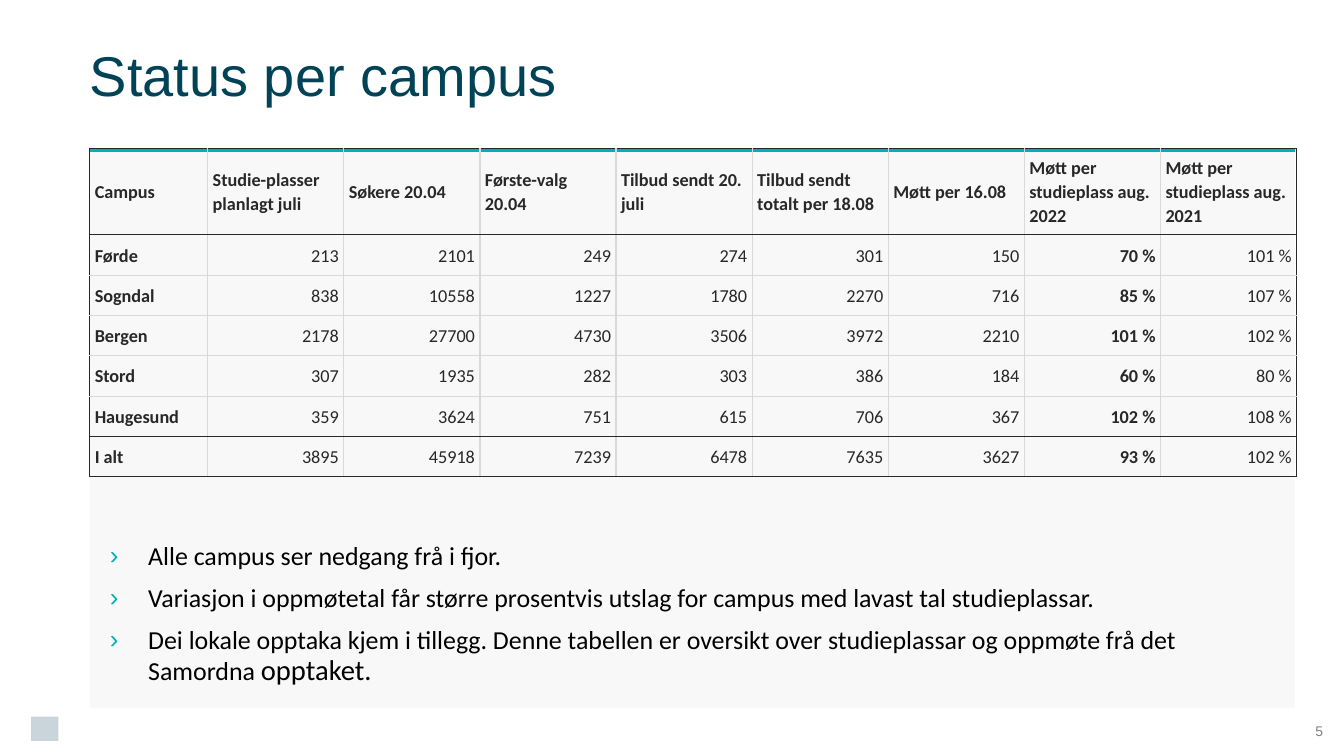
from dataclasses import dataclass

from lxml.etree import SubElement
from pptx import Presentation
from pptx.dml.color import RGBColor
from pptx.enum.shapes import MSO_CONNECTOR, MSO_SHAPE
from pptx.enum.text import MSO_ANCHOR, PP_ALIGN
from pptx.oxml import parse_xml
from pptx.oxml.ns import nsdecls, qn
from pptx.util import Inches, Pt


@dataclass(frozen=True)
class Theme:
    title: str = "004357"
    accent: str = "00AFBA"
    panel: str = "F2F2F2"
    mark: str = "C9D5DA"
    ink: str = "282828"
    grid: str = "D9D9D9"
    body: str = "000000"
    muted: str = "808080"
    head_font: str = "Arial"
    body_font: str = "Calibri"
    title_size: float = 40
    body_size: float = 18.5
    large_size: float = 20.4
    cell_size: float = 13
    page_size: float = 10


THEME = Theme()
LEFT, WIDTH = 0.89, 11.95
COLS = [1.17] + [1.35] * 8
ROWS = [0.86] + [0.4] * 6
BOLD_COL = 7

DATA = [
    ["Campus", "Studie-plasser planlagt juli", "Søkere 20.04", "Første-valg 20.04",
     "Tilbud sendt 20. juli", "Tilbud sendt totalt per 18.08", "Møtt per 16.08",
     "Møtt per studieplass aug. 2022", "Møtt per studieplass aug. 2021"],
    ["Førde", "213", "2101", "249", "274", "301", "150", "70 %", "101 %"],
    ["Sogndal", "838", "10558", "1227", "1780", "2270", "716", "85 %", "107 %"],
    ["Bergen", "2178", "27700", "4730", "3506", "3972", "2210", "101 %", "102 %"],
    ["Stord", "307", "1935", "282", "303", "386", "184", "60 %", "80 %"],
    ["Haugesund", "359", "3624", "751", "615", "706", "367", "102 %", "108 %"],
    ["I alt", "3895", "45918", "7239", "6478", "7635", "3627", "93 %", "102 %"],
]
POINTS = [
    "Alle campus ser nedgang frå i fjor.",
    "Variasjon i oppmøtetal får større prosentvis utslag for campus med lavast tal studieplassar.",
    "Dei lokale opptaka kjem i tillegg. Denne tabellen er oversikt over studieplassar "
    "og oppmøte frå det Samordna ",
]
LAST_WORD = "opptaket."


def style(run, size, color, face, bold=False):
    font = run.font
    font.size, font.name, font.bold = Pt(size), face, bold
    font.color.rgb = RGBColor.from_string(color)


def set_frame(frame, inset, anchor):
    frame.word_wrap = True
    frame.vertical_anchor = anchor
    frame.margin_left = frame.margin_right = Inches(inset)
    frame.margin_top = frame.margin_bottom = Inches(inset)


def add_title(slide, text):
    title = slide.shapes.title
    title.left, title.top = Inches(LEFT), Inches(0)
    title.width, title.height = Inches(WIDTH), Inches(1.48)
    frame = title.text_frame
    frame.text = text
    set_frame(frame, 0, MSO_ANCHOR.MIDDLE)
    frame.paragraphs[0].alignment = PP_ALIGN.LEFT
    style(frame.paragraphs[0].runs[0], THEME.title_size, THEME.title, THEME.head_font)


def add_block(slide, box, color, alpha=100):
    """Add a plain filled rectangle; alpha is its opacity in percent."""
    block = slide.shapes.add_shape(MSO_SHAPE.RECTANGLE, *map(Inches, box))
    block.shadow.inherit = False
    block.fill.solid()
    block.fill.fore_color.rgb = RGBColor.from_string(color)
    block.line.fill.background()
    if alpha < 100:
        tint = block.fill._xPr.find(qn("a:solidFill"))[0]
        SubElement(tint, qn("a:alpha"), val=str(alpha * 1000))


def add_rule(slide, top):
    rule = slide.shapes.add_connector(
        MSO_CONNECTOR.STRAIGHT, Inches(LEFT), Inches(top), Inches(LEFT + WIDTH), Inches(top))
    rule.line.color.rgb = RGBColor.from_string(THEME.accent)
    rule.line.width = Pt(2)
    SubElement(rule._element.spPr, qn("a:effectLst"))


def set_edges(cell, colors):
    """Draw the cell borders, given in the order left, right, top, bottom."""
    props = cell._tc.get_or_add_tcPr()
    for spot, (side, color) in enumerate(zip("LRTB", colors)):
        props.insert(spot, parse_xml(
            f'<a:ln{side} {nsdecls("a")} w="12700"><a:solidFill>'
            f'<a:srgbClr val="{color}"/></a:solidFill></a:ln{side}>'))


def fill_cell(cell, text, row, col):
    cell.text_frame.text = text
    cell.fill.background()
    cell.vertical_anchor = MSO_ANCHOR.MIDDLE
    cell.margin_left = cell.margin_right = Inches(0.05)
    cell.margin_top = cell.margin_bottom = Inches(0)
    para = cell.text_frame.paragraphs[0]
    para.line_spacing, para.space_after = 1.07, Pt(8)
    label = row == 0 or col == 0
    para.alignment = PP_ALIGN.LEFT if label else PP_ALIGN.RIGHT
    style(para.runs[0], THEME.cell_size, THEME.ink, THEME.body_font,
          label or col == BOLD_COL)
    total = len(ROWS) - 1
    dark = [col == 0, col == len(COLS) - 1, row in (0, 1, total), row in (0, total - 1, total)]
    set_edges(cell, [THEME.ink if edge else THEME.grid for edge in dark])


def add_grid(slide):
    table = slide.shapes.add_table(
        len(ROWS), len(COLS), Inches(LEFT), Inches(1.47),
        Inches(WIDTH), Inches(sum(ROWS))).table
    table.first_row = table.horz_banding = False
    for col, width in zip(table.columns, COLS):
        col.width = Inches(width)
    for row, height in zip(table.rows, ROWS):
        row.height = Inches(height)
    for row, line in enumerate(DATA):
        for col, text in enumerate(line):
            fill_cell(table.cell(row, col), text, row, col)


def set_bullet(para):
    props = para._p.get_or_add_pPr()
    indent = Inches(0.38)
    props.set("marL", str(indent))
    props.set("indent", str(-indent))
    color = SubElement(props, qn("a:buClr"))
    SubElement(color, qn("a:srgbClr"), val=THEME.accent)
    SubElement(props, qn("a:buFont"), typeface=THEME.head_font)
    SubElement(props, qn("a:buChar"), char="›")


def add_points(slide):
    box = slide.shapes.add_textbox(Inches(LEFT), Inches(5.19), Inches(WIDTH), Inches(1.83))
    frame = box.text_frame
    frame.text = "\n".join(POINTS)
    set_frame(frame, 0.2, MSO_ANCHOR.TOP)
    for para in frame.paragraphs:
        para.line_spacing, para.space_before = 0.9, Pt(10)
        set_bullet(para)
        style(para.runs[0], THEME.body_size, THEME.body, THEME.body_font)
    run = frame.paragraphs[-1].add_run()
    run.text = LAST_WORD
    style(run, THEME.large_size, THEME.body, THEME.body_font)


def add_page(slide, text):
    box = slide.shapes.add_textbox(Inches(12.84), Inches(7.01), Inches(0.49), Inches(0.49))
    frame = box.text_frame
    frame.text = text
    set_frame(frame, 0, MSO_ANCHOR.MIDDLE)
    para = frame.paragraphs[0]
    para.alignment = PP_ALIGN.CENTER
    style(para.runs[0], THEME.page_size, THEME.muted, THEME.head_font)


def main():
    deck = Presentation()
    deck.slide_width, deck.slide_height = Inches(13.33), Inches(7.5)
    slide = deck.slides.add_slide(deck.slide_layouts[5])
    add_block(slide, (0.31, 7.11, 0.27, 0.24), THEME.mark)
    add_block(slide, (LEFT, 1.49, WIDTH, 5.53), THEME.panel, 50)
    add_rule(slide, 1.49)
    add_title(slide, "Status per campus")
    add_points(slide)
    add_page(slide, "5")
    add_grid(slide)
    deck.save("out.pptx")


if __name__ == "__main__":
    main()
